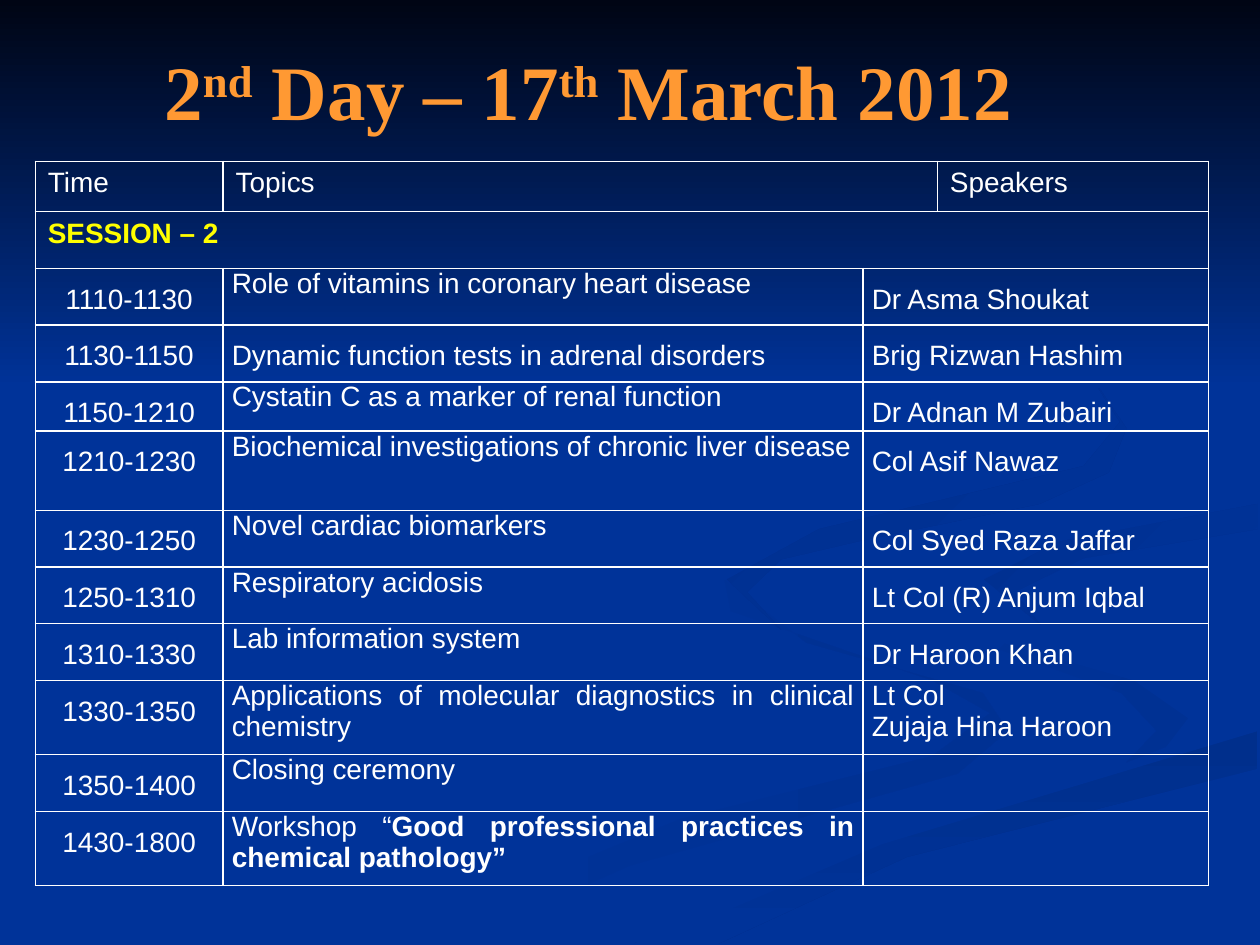
from pptx import Presentation
from pptx.dml.color import RGBColor
from pptx.enum.shapes import MSO_SHAPE
from pptx.enum.text import MSO_ANCHOR, PP_ALIGN as AL
from pptx.oxml import parse_xml
from pptx.oxml.ns import nsdecls
from pptx.util import Inches, Pt


def rgb(hex_color):
    return RGBColor.from_string(hex_color)


def write(p, text, size=16, color="FFFFFF", bold=False, font="Arial", baseline=0):
    r = p.add_run()
    r.text = text
    r.font.size, r.font.bold, r.font.name = Pt(size), bold, font
    r.font.color.rgb = rgb(color)
    if baseline:
        r.font._element.set("baseline", str(baseline * 1000))


prs = Presentation()
prs.slide_width, prs.slide_height = Inches(10), Inches(7.5)
s = prs.slides.add_slide(prs.slide_layouts[5])
s.background.fill.solid()
s.background.fill.fore_color.rgb = rgb("003399")

ribbons = [
    ("003399", "003193", 0, [
        (7.8, 5.5), (6.4, 5.1), (5.75, 4.6), (5.8, 4.85), (7.4, 5.4), (7.86, 5.66),
        (7.4, 6), (5.4, 6.5), (3, 7.49), (3.6, 7.49), (5, 6.87), (7.6, 6.14), (8, 5.8)]),
    ("003399", "003193", 45, [
        (9.43, 5.7), (9, 5.4), (7.6, 5), (7.24, 4.64), (7.5, 5), (8.9, 5.5),
        (9.18, 5.8), (8.94, 6.05), (9.32, 5.9)]),
    ("002F8C", "003399", 90, [
        (5.03, 7.49), (5.7, 7.49), (7.2, 6.8), (9.98, 6.1), (9.98, 5.8), (7.6, 6.5),
        (6.3, 6.9)]),
    ("003399", "003399", 0, [
        (7.25, 4.64), (7.6, 5), (9, 5.4), (9.43, 5.7), (9.2, 6), (7, 6.55), (4.77, 7.49),
        (5.2, 7.47), (7, 6.7), (9.99, 5.8), (9.99, 5.4), (8.3, 5), (7.82, 4.6),
        (8.5, 4.27), (9.99, 4), (9.99, 3.87), (7.7, 4.27)]),
    ("003091", "003399", 45, [
        (7.81, 4.6), (8.26, 4.96), (8.05, 4.7), (8.6, 4.43), (9.98, 4.2), (9.98, 4),
        (8.4, 4.3)]),
    ("002F8E", "003399", 45, [
        (6.8, 4.3), (8.25, 4), (8.8, 3.75), (8.94, 3.4), (8.6, 2.9), (7.62, 2.33),
        (8.6, 2.9), (8.89, 3.35), (8.6, 3.7), (6.5, 4.2), (5.77, 4.6), (6.2, 5),
        (5.93, 4.7), (6.2, 4.44)]),
    ("000514", "003399", 90, None),
]
for start, end, angle, points in ribbons:
    if points:
        outline = [(Inches(x), Inches(y)) for x, y in points]
        builder = s.shapes.build_freeform(*outline[0])
        builder.add_line_segments(outline[1:], close=True)
        sp = builder.convert_to_shape()
    else:
        sp = s.shapes.add_shape(MSO_SHAPE.RECTANGLE, 0, 0, Inches(10), Inches(3.08))
    sp.shadow.inherit = False
    sp.line.fill.background()
    sp.fill.gradient()
    sp.fill.gradient_angle = (360 - angle) % 360
    for stop, color, position in zip(sp.fill.gradient_stops, (start, end), (0, 1)):
        stop.color.rgb = rgb(color)
        stop.position = position

title = s.shapes.title
s.shapes.element.append(title.element)
title.left, title.top = Inches(0.42), Inches(0.25)
title.width, title.height = Inches(8.5), Inches(0.92)
title.text_frame.vertical_anchor = MSO_ANCHOR.MIDDLE
p = title.text_frame.paragraphs[0]
p.alignment = AL.CENTER
for text, baseline in [("2", 0), ("nd", 30), (" Day – 17", 0), ("th", 30), (" March 2012", 0)]:
    write(p, text, size=44, color="FF9933", bold=True, font="Times New Roman", baseline=baseline)

sessions = [
    ("1110-1130", "Role of vitamins in coronary heart disease", "Dr Asma Shoukat"),
    ("1130-1150", "Dynamic function tests in adrenal disorders", "Brig Rizwan Hashim"),
    ("1150-1210", "Cystatin C as a marker of renal function", "Dr Adnan M Zubairi"),
    ("1210-1230", "Biochemical investigations of chronic liver disease", "Col Asif Nawaz"),
    ("1230-1250", "Novel cardiac biomarkers", "Col Syed Raza Jaffar"),
    ("1250-1310", "Respiratory acidosis", "Lt Col (R) Anjum Iqbal"),
    ("1310-1330", "Lab information system", "Dr Haroon Khan"),
    ("1330-1350", "Applications of molecular diagnostics in clinical chemistry",
     "Lt Col\nZujaja Hina Haroon"),
    ("1350-1400", "Closing ceremony", ""),
    ("1430-1800", "Workshop “|Good professional practices in chemical pathology”", ""),
]
col_widths = [1.49, 5.08, 0.59, 2.15]
row_heights = [0.4, 0.45, 0.45, 0.45, 0.39, 0.63, 0.45, 0.45, 0.45, 0.59, 0.45, 0.59]
frame = s.shapes.add_table(len(row_heights), len(col_widths), Inches(0.28), Inches(1.28),
                           Inches(sum(col_widths)), Inches(sum(row_heights)))
table = frame.table
table.first_row = table.horz_banding = False
for column, width in zip(table.columns, col_widths):
    column.width = Inches(width)
for row, height in zip(table.rows, row_heights):
    row.height = Inches(height)

for cell in table.iter_cells():
    tcPr = cell._tc.get_or_add_tcPr()
    for side in ("lnL", "lnR", "lnT", "lnB"):
        tcPr.append(parse_xml(
            f'<a:{side} {nsdecls("a")} w="12700"><a:solidFill><a:srgbClr val="FFFFFF"/>'
            f'</a:solidFill></a:{side}>'))
    cell.fill.background()

table.cell(0, 1).merge(table.cell(0, 2))
table.cell(1, 0).merge(table.cell(1, 3))
for col, heading in [(0, "Time"), (1, "Topics"), (3, "Speakers")]:
    write(table.cell(0, col).text_frame.paragraphs[0], heading)
write(table.cell(1, 0).text_frame.paragraphs[0], "SESSION – 2", color="FFFF00", bold=True)

for row, session in enumerate(sessions, start=2):
    table.cell(row, 2).merge(table.cell(row, 3))
    for col, text in enumerate(session):
        if not text:
            continue
        cell = table.cell(row, col)
        cell.margin_left = cell.margin_right = Inches(0.07)
        cell.margin_top = cell.margin_bottom = 0
        lines = text.split("\n")
        for i, line in enumerate(lines):
            p = cell.text_frame.add_paragraph() if i else cell.text_frame.paragraphs[0]
            p.alignment = AL.JUSTIFY if col else AL.CENTER
            if len(lines) == 1 and (col != 1 or session[0] == "1130-1150"):
                p.line_spacing = 1.5
                if col != 1:
                    p.space_after = Pt(10)
            for j, part in enumerate(line.split("|")):
                write(p, part, bold=j == 1)

prs.save("out.pptx")
